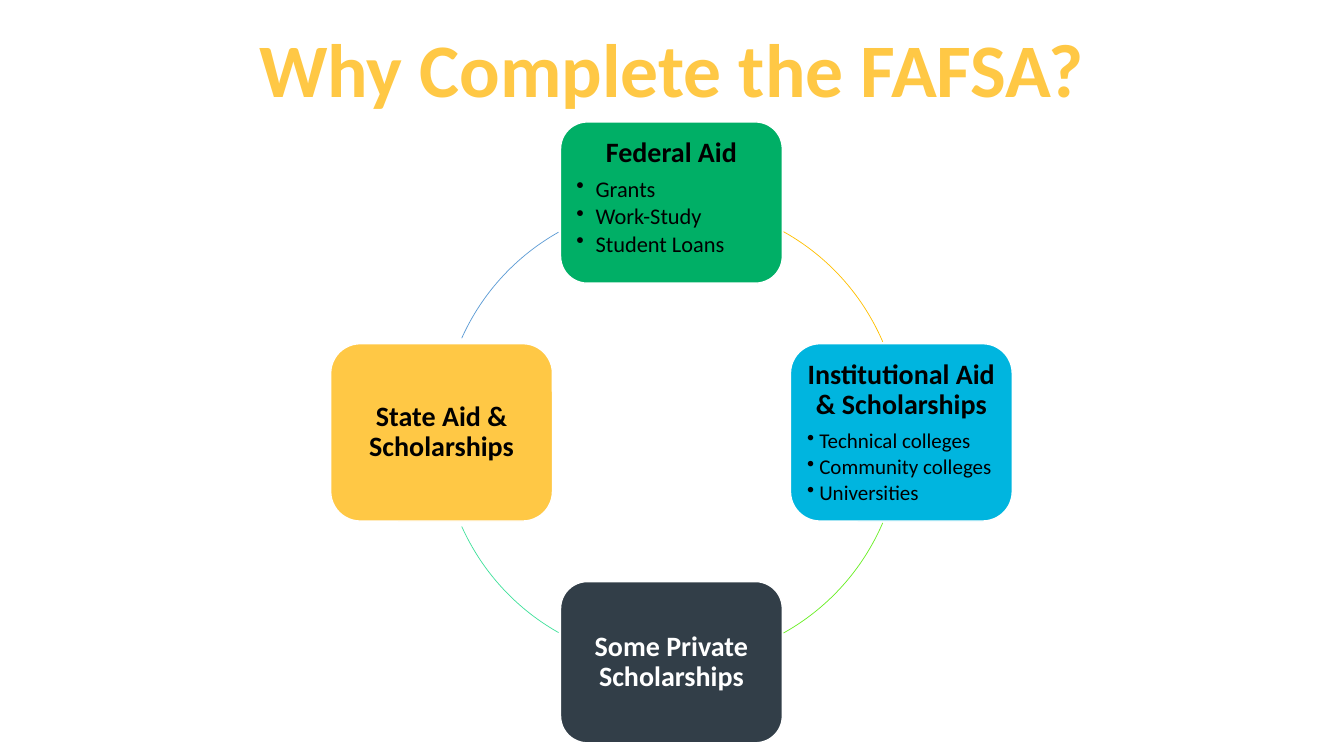
from math import cos, radians, sin

from lxml.etree import SubElement
from pptx import Presentation
from pptx.dml.color import RGBColor
from pptx.enum.shapes import MSO_SHAPE
from pptx.enum.text import MSO_ANCHOR, PP_ALIGN
from pptx.oxml.ns import qn
from pptx.util import Inches, Pt

GOLD = RGBColor(0xFF, 0xC8, 0x45)
GREEN = RGBColor(0x00, 0xAF, 0x66)
CYAN = RGBColor(0x00, 0xB5, 0xDF)
SLATE = RGBColor(0x32, 0x3E, 0x48)
BLACK = RGBColor(0x00, 0x00, 0x00)
WHITE = RGBColor(0xFF, 0xFF, 0xFF)
AMBER_ARC = RGBColor(0xFF, 0xC0, 0x00)
LIME_ARC = RGBColor(0x67, 0xEF, 0x21)
MINT_ARC = RGBColor(0x3F, 0xE1, 0x9B)
BLUE_ARC = RGBColor(0x5B, 0x9B, 0xD5)


class AidCycle:
    """Draws a titled ring of aid sources on one slide."""

    font_name = "Calibri"
    center_x, center_y, radius = 6.66, 4.29, 2.28
    card_width = 2.2

    def __init__(self, slide):
        self.slide = slide

    def style(self, paragraph, size, color, bold=False):
        paragraph.line_spacing = 0.9
        for run in paragraph.runs:
            run.font.name = self.font_name
            run.font.size = Pt(size)
            run.font.bold = bold
            run.font.color.rgb = color

    def title(self, wording):
        heading = self.slide.shapes.title
        heading.left, heading.top = Inches(0.91), Inches(0)
        heading.width, heading.height = Inches(11.5), Inches(1.45)
        frame = heading.text_frame
        frame.text = wording
        frame.vertical_anchor = MSO_ANCHOR.MIDDLE
        frame.paragraphs[0].alignment = PP_ALIGN.CENTER
        self.style(frame.paragraphs[0], 54, GOLD, bold=True)

    def bullet(self, frame, wording, size, indent, color):
        paragraph = frame.add_paragraph()
        paragraph.text = wording
        paragraph.level = 1
        paragraph.alignment = PP_ALIGN.LEFT
        properties = paragraph._p.get_or_add_pPr()
        properties.set("marL", str(Inches(indent)))
        properties.set("indent", str(-Inches(indent)))
        SubElement(properties, qn("a:buChar")).set("char", "•")
        paragraph.space_after = Pt(0.15 * size)
        self.style(paragraph, size, color)

    def card(self, angle, height, fill, color, heading, items=(), size=16, indent=0.19):
        left = self.center_x + self.radius * cos(radians(angle)) - self.card_width / 2
        top = self.center_y + self.radius * sin(radians(angle)) - height / 2
        source = self.slide.shapes.add_shape(
            MSO_SHAPE.ROUNDED_RECTANGLE,
            Inches(left), Inches(top), Inches(self.card_width), Inches(height))
        source.shadow.inherit = False
        source.fill.solid()
        source.fill.fore_color.rgb = fill
        source.line.color.rgb = WHITE
        source.line.width = Pt(1)
        frame = source.text_frame
        frame.word_wrap = True
        frame.margin_left = frame.margin_right = Inches(0.08)
        frame.margin_top = frame.margin_bottom = Inches(0.08)
        frame.vertical_anchor = MSO_ANCHOR.TOP if items else MSO_ANCHOR.MIDDLE
        frame.text = heading
        frame.paragraphs[0].alignment = PP_ALIGN.CENTER
        frame.paragraphs[0].space_after = Pt(7)
        self.style(frame.paragraphs[0], 20, color, bold=True)
        for item in items:
            self.bullet(frame, item, size, indent, color)

    def arc(self, start, end, color):
        diameter = Inches(2 * self.radius)
        link = self.slide.shapes.add_shape(
            MSO_SHAPE.ARC,
            Inches(self.center_x - self.radius), Inches(self.center_y - self.radius),
            diameter, diameter)
        link.shadow.inherit = False
        link.adjustments[0] = start * 0.6
        link.adjustments[1] = end * 0.6
        link.fill.background()
        link.line.color.rgb = color
        link.line.width = Pt(0.5)


def main():
    presentation = Presentation()
    presentation.slide_width = Inches(13.33)
    presentation.slide_height = Inches(7.5)
    cycle = AidCycle(presentation.slides.add_slide(presentation.slide_layouts[5]))

    cycle.title("Why Complete the FAFSA?")
    cycle.card(-90, 1.6, GREEN, BLACK, "Federal Aid",
               ("Grants", "Work-Study", "Student Loans"))
    cycle.card(0, 1.76, CYAN, BLACK, "Institutional Aid & Scholarships",
               ("Technical colleges", "Community colleges", "Universities"),
               size=15, indent=0.12)
    cycle.card(90, 1.6, SLATE, WHITE, "Some Private Scholarships")
    cycle.card(180, 1.76, GOLD, BLACK, "State Aid & Scholarships")

    for start, end, color in (
            (299.2, 336.8, AMBER_ARC), (23.2, 60.8, LIME_ARC),
            (119.4, 155.8, MINT_ARC), (204.2, 240.6, BLUE_ARC)):
        cycle.arc(start, end, color)

    presentation.save("out.pptx")


if __name__ == "__main__":
    main()
